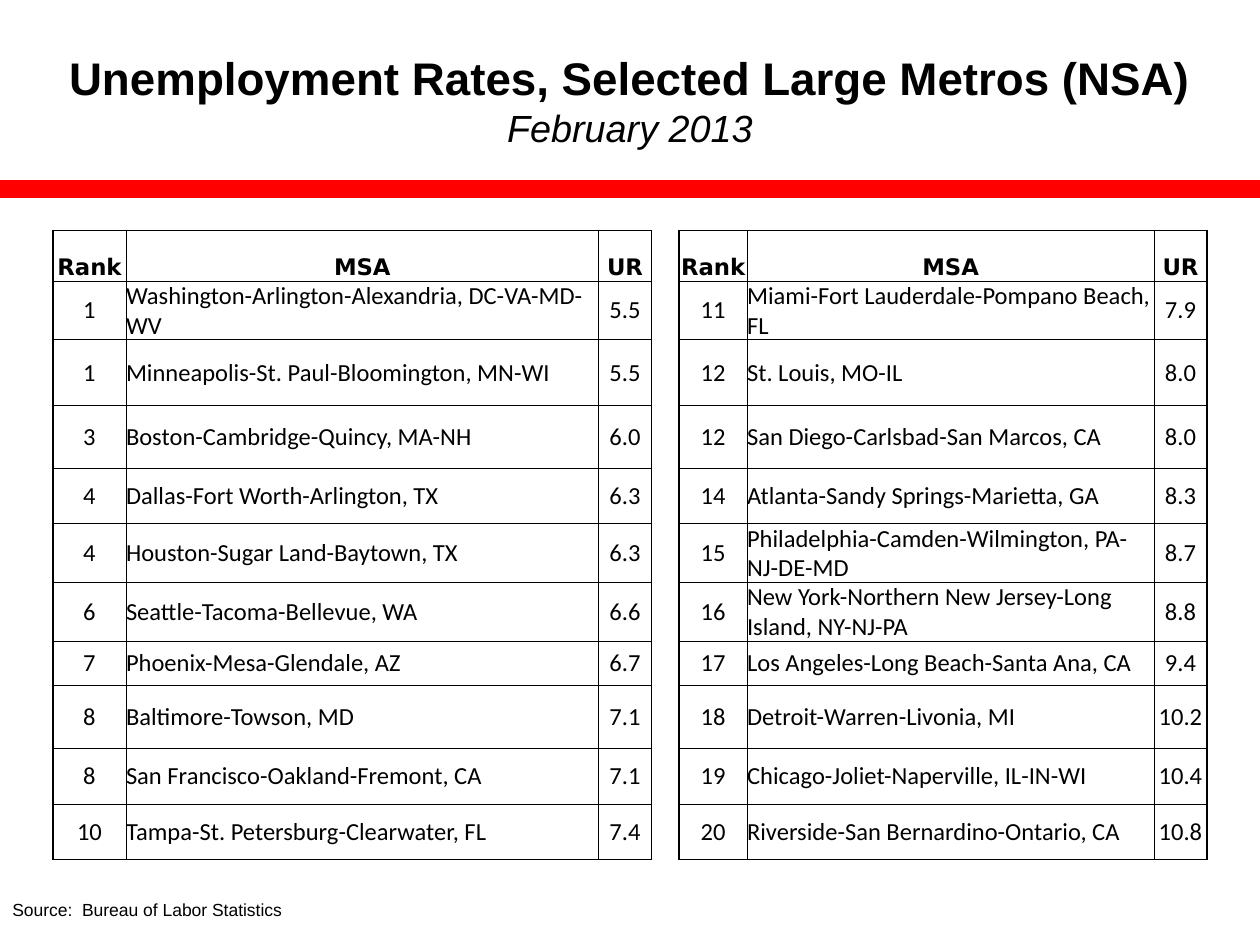
"""Build a slide ranking unemployment rates of large metro areas."""
from lxml.etree import SubElement
from pptx import Presentation
from pptx.dml.color import RGBColor
from pptx.enum.shapes import MSO_CONNECTOR
from pptx.enum.text import MSO_ANCHOR, PP_ALIGN
from pptx.oxml.ns import qn
from pptx.util import Inches, Pt

TITLE = "Unemployment Rates, Selected Large Metros (NSA)"
SUBTITLE = "February 2013"
SOURCE = "Source:  Bureau of Labor Statistics"
HEADINGS = ("Rank", "MSA", "UR")
METROS = [
    ("1", "Washington-Arlington-Alexandria, DC-VA-MD-WV", "5.5"),
    ("1", "Minneapolis-St. Paul-Bloomington, MN-WI", "5.5"),
    ("3", "Boston-Cambridge-Quincy, MA-NH", "6.0"),
    ("4", "Dallas-Fort Worth-Arlington, TX", "6.3"),
    ("4", "Houston-Sugar Land-Baytown, TX", "6.3"),
    ("6", "Seattle-Tacoma-Bellevue, WA", "6.6"),
    ("7", "Phoenix-Mesa-Glendale, AZ", "6.7"),
    ("8", "Baltimore-Towson, MD", "7.1"),
    ("8", "San Francisco-Oakland-Fremont, CA", "7.1"),
    ("10", "Tampa-St. Petersburg-Clearwater, FL", "7.4"),
    ("11", "Miami-Fort Lauderdale-Pompano Beach, FL", "7.9"),
    ("12", "St. Louis, MO-IL", "8.0"),
    ("12", "San Diego-Carlsbad-San Marcos, CA", "8.0"),
    ("14", "Atlanta-Sandy Springs-Marietta, GA", "8.3"),
    ("15", "Philadelphia-Camden-Wilmington, PA-NJ-DE-MD", "8.7"),
    ("16", "New York-Northern New Jersey-Long Island, NY-NJ-PA", "8.8"),
    ("17", "Los Angeles-Long Beach-Santa Ana, CA", "9.4"),
    ("18", "Detroit-Warren-Livonia, MI", "10.2"),
    ("19", "Chicago-Joliet-Naperville, IL-IN-WI", "10.4"),
    ("20", "Riverside-San Bernardino-Ontario, CA", "10.8"),
]
COLUMN_WIDTHS = (0.58, 3.75, 0.42, 0.22, 0.54, 3.23, 0.42)
ROW_HEIGHTS = (0.4, 0.42, 0.52, 0.5, 0.44, 0.44, 0.42, 0.35, 0.5, 0.44, 0.44)
GAP_COLUMN = 3
BLACK, RED = "000000", "FF0000"
FORMATS = {
    "title": {"name": "Arial", "size": Pt(26.1), "bold": True},
    "subtitle": {"name": "Arial", "size": Pt(21.6), "italic": True},
    "source": {"name": "Arial", "size": Pt(10)},
    "heading": {"name": "DejaVu Sans", "size": Pt(13), "bold": True},
    "body": {"name": "Calibri", "size": Pt(14), "bold": False},
}


def color(hex_value):
    return RGBColor.from_string(hex_value)


def add_span(para, text, style):
    span = para.add_run()
    span.text = text
    for name, value in FORMATS[style].items():
        setattr(span.font, name, value)
    span.font.color.rgb = color(BLACK)


def add_box(page, left, top, width, height):
    box = page.shapes.add_textbox(*map(Inches, (left, top, width, height)))
    box.text_frame.word_wrap = True
    box.text_frame.vertical_anchor = MSO_ANCHOR.MIDDLE
    return box.text_frame.paragraphs[0]


def set_borders(cell, widths):
    properties = cell._tc.get_or_add_tcPr()
    for side, width in zip("LRTB", widths):
        line = SubElement(properties, qn(f"a:ln{side}"), w=str(Pt(width)))
        if width:
            fill = SubElement(line, qn("a:solidFill"))
            SubElement(fill, qn("a:srgbClr"), val=BLACK)
        else:
            SubElement(line, qn("a:noFill"))


def border_widths(row, column):
    if column == GAP_COLUMN:
        return 1, 1, 0, 0
    left = 1 if column in (0, GAP_COLUMN + 1) else 0.5
    right = 1 if column in (GAP_COLUMN - 1, len(COLUMN_WIDTHS) - 1) else 0.5
    return left, right, 1 if row == 0 else 0.5, 0.5


def fill_cell(cell, text, row, column):
    header = row == 0
    inset = Inches(0.01 if header else 0)
    cell.margin_left = cell.margin_right = cell.margin_top = inset
    cell.margin_bottom = 0
    cell.vertical_anchor = MSO_ANCHOR.BOTTOM if header else MSO_ANCHOR.MIDDLE
    set_borders(cell, border_widths(row, column))
    cell.fill.background()
    if text:
        para = cell.text_frame.paragraphs[0]
        is_name = column % (GAP_COLUMN + 1) == 1
        para.alignment = PP_ALIGN.LEFT if is_name and not header else PP_ALIGN.CENTER
        add_span(para, text, "heading" if header else "body")


def add_ranking(page):
    half = len(METROS) // 2
    pairs = [(HEADINGS, HEADINGS), *zip(METROS[:half], METROS[half:])]
    size = Inches(sum(COLUMN_WIDTHS)), Inches(sum(ROW_HEIGHTS))
    frame = page.shapes.add_table(
        len(pairs), len(COLUMN_WIDTHS), Inches(0.42), Inches(1.83), *size
    )
    table = frame.table
    table.first_row = table.horz_banding = False
    for column, width in zip(table.columns, COLUMN_WIDTHS):
        column.width = Inches(width)
    for row, height in zip(table.rows, ROW_HEIGHTS):
        row.height = Inches(height)
    for row, (left, right) in enumerate(pairs):
        for column, text in enumerate((*left, "", *right)):
            fill_cell(table.cell(row, column), text, row, column)


def main():
    deck = Presentation()
    deck.slide_width, deck.slide_height = Inches(10), Inches(7.5)
    page = deck.slides.add_slide(deck.slide_layouts[6])

    heading = add_box(page, 0, 0.42, 10, 0.75)
    heading.alignment = PP_ALIGN.CENTER
    add_span(heading, TITLE, "title")
    heading.add_line_break()
    add_span(heading, SUBTITLE, "subtitle")

    add_span(add_box(page, 0, 7.08, 6, 0.27), SOURCE, "source")

    rule = page.shapes.add_connector(
        MSO_CONNECTOR.STRAIGHT, 0, Inches(1.5), Inches(10), Inches(1.5)
    )
    rule.line.color.rgb = color(RED)
    rule.line.width = Pt(10)
    SubElement(rule._element.spPr, qn("a:effectLst"))

    add_ranking(page)
    deck.save("out.pptx")


if __name__ == "__main__":
    main()
